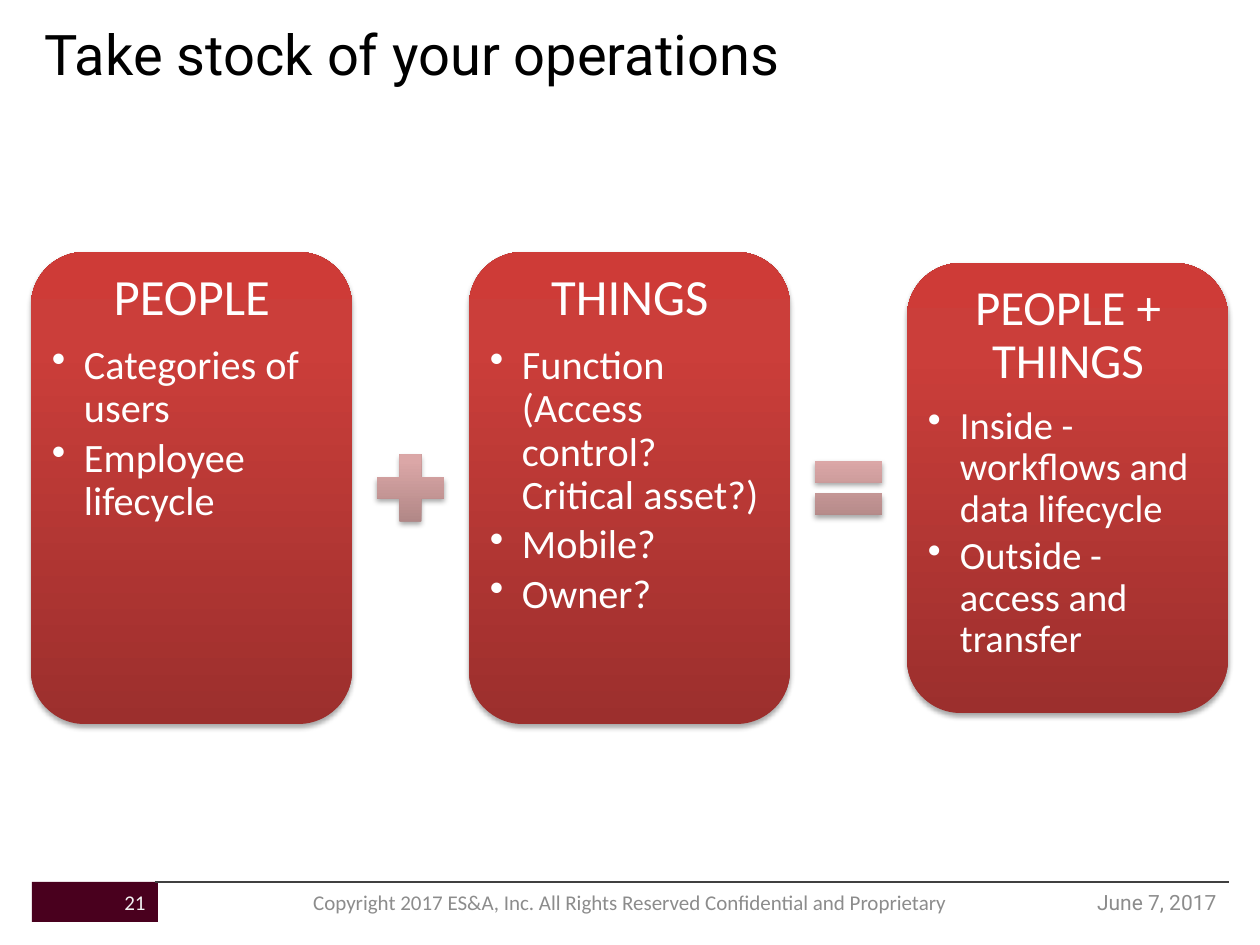
import dataclasses

import lxml.etree
import pptx
import pptx.dml.color
import pptx.enum.shapes
import pptx.enum.text
import pptx.oxml
import pptx.oxml.ns
import pptx.util

RGB = pptx.dml.color.RGBColor.from_string
SHAPE = pptx.enum.shapes.MSO_SHAPE
ALIGN = pptx.enum.text.PP_ALIGN
ANCHOR = pptx.enum.text.MSO_ANCHOR
PX = 914400 / 126


@dataclasses.dataclass(frozen=True)
class Theme:
    heading_font: str = "Roboto"
    body_font: str = "Calibri"
    title: str = "000000"
    card_text: str = "FFFFFF"
    footer_text: str = "8C8C8C"
    number_text: str = "F2F2F2"
    footer_block: str = "49001E"
    rule: str = "404040"
    card_fill: tuple = ("9C2F2D", "CB3E3A", "CE3B37")
    sign_fill: tuple = ("A98180", "DBA7A7", "DDA7A6")
    title_size: int = 32
    footer_size: int = 12


theme = Theme()


def box(*lengths):
    return [pptx.util.Emu(round(n * PX)) for n in lengths]


def write(p, text, *, size, color, font=theme.body_font, align=ALIGN.LEFT,
          spacing=None, after=0, bullet=False):
    if bullet:
        pPr = p._p.get_or_add_pPr()
        indent = box(32)[0]
        pPr.set("marL", str(indent))
        pPr.set("indent", str(-indent))
        lxml.etree.SubElement(pPr, pptx.oxml.ns.qn("a:buChar")).set("char", "•")
    p.alignment = align
    p.line_spacing = spacing
    p.space_before = pptx.util.Pt(0)
    p.space_after = pptx.util.Pt(after)
    r = p.add_run()
    r.text = text
    r.font.name = font
    r.font.size = pptx.util.Pt(size)
    r.font.color.rgb = RGB(color)


prs = pptx.Presentation()
prs.slide_width, prs.slide_height = box(1260, 945)
s = prs.slides.add_slide(prs.slide_layouts[5])

title = s.shapes.title
title.left, title.top, title.width, title.height = box(32, 13, 1008, 151)
title.text_frame.vertical_anchor = ANCHOR.TOP
write(title.text_frame.paragraphs[0], "Take stock of your operations",
      size=theme.title_size, color=theme.title, font=theme.heading_font)

cards = [
    ("PEOPLE", ["Categories of users", "Employee lifecycle"], 472, 29, 23),
    ("THINGS", ["Function (Access control? Critical asset?)", "Mobile?", "Owner?"], 472, 29, 23),
    ("PEOPLE + THINGS", ["Inside - workflows and data lifecycle",
                         "Outside - access and transfer"], 450, 28, 22),
]
middle, pitch = 488, 438
panels = [(SHAPE.ROUNDED_RECTANGLE, 31 + pitch * i, 321, card[2], theme.card_fill)
          for i, card in enumerate(cards)]
panels += [(kind, 365 + pitch * i, 91, 91, theme.sign_fill)
           for i, kind in enumerate([SHAPE.MATH_PLUS, SHAPE.MATH_EQUAL])]

for kind, x, w, h, colors in panels:
    sp = s.shapes.add_shape(kind, *box(x, middle - h / 2, w, h))
    sp.line.fill.background()
    sp.fill.gradient()
    sp.fill.gradient_angle = 90
    stops = sp._element.spPr.find(".//" + pptx.oxml.ns.qn("a:gsLst"))
    for stop in list(stops):
        stops.remove(stop)
    for pos, color in zip((0, 80, 100), colors):
        stop = lxml.etree.SubElement(stops, pptx.oxml.ns.qn("a:gs"), pos=str(pos * 1000))
        lxml.etree.SubElement(stop, pptx.oxml.ns.qn("a:srgbClr"), val=color)
    sp.shadow.inherit = False
    effects = sp._element.spPr.find(pptx.oxml.ns.qn("a:effectLst"))
    shadow = lxml.etree.SubElement(
        effects, pptx.oxml.ns.qn("a:outerShdw"), blurRad=str(pptx.util.Pt(3.1)),
        dist=str(pptx.util.Pt(1.8)), dir="5400000", rotWithShape="0")
    tint = lxml.etree.SubElement(shadow, pptx.oxml.ns.qn("a:srgbClr"), val="000000")
    lxml.etree.SubElement(tint, pptx.oxml.ns.qn("a:alpha"), val="35000")

for i, (heading, items, h, heading_size, item_size) in enumerate(cards):
    tf = s.shapes.add_textbox(*box(47 + pitch * i, middle - h / 2 + 15, 290, h - 31)).text_frame
    tf.word_wrap = True
    tf.margin_left, tf.margin_top, tf.margin_right, tf.margin_bottom = box(5, 5, 5, 5)
    write(tf.paragraphs[0], heading, size=heading_size, color=theme.card_text,
          align=ALIGN.CENTER, spacing=0.9, after=round(heading_size * 0.35, 1))
    for item in items:
        write(tf.add_paragraph(), item, size=item_size, color=theme.card_text,
              spacing=0.9, after=round(item_size * 0.15, 1), bullet=True)

block = s.shapes.add_shape(SHAPE.RECTANGLE, *box(32, 882, 126, 40))
block.shadow.inherit = False
block.fill.solid()
block.fill.fore_color.rgb = RGB(theme.footer_block)
block.line.fill.background()

rule = s.shapes.add_connector(pptx.enum.shapes.MSO_CONNECTOR.STRAIGHT, *box(155, 882, 1229, 882))
rule.line.color.rgb = RGB(theme.rule)
rule.line.width = pptx.util.Pt(0.75)
lxml.etree.SubElement(rule._element.spPr, pptx.oxml.ns.qn("a:effectLst"))

footer = [
    ("June 7, 2017", 966, 263, ALIGN.RIGHT, theme.heading_font, theme.footer_text),
    ("Copyright 2017 ES&A, Inc. All Rights Reserved Confidential and Proprietary",
     294, 672, ALIGN.CENTER, theme.body_font, theme.footer_text),
    ("21", 32, 126, ALIGN.RIGHT, theme.body_font, theme.number_text),
]
for text, x, w, align, font, color in footer:
    tf = s.shapes.add_textbox(*box(x, 882, w, 40)).text_frame
    tf.word_wrap = True
    tf.vertical_anchor = ANCHOR.MIDDLE
    write(tf.paragraphs[0], text, size=theme.footer_size, color=color, font=font, align=align)

prs.save("out.pptx")
